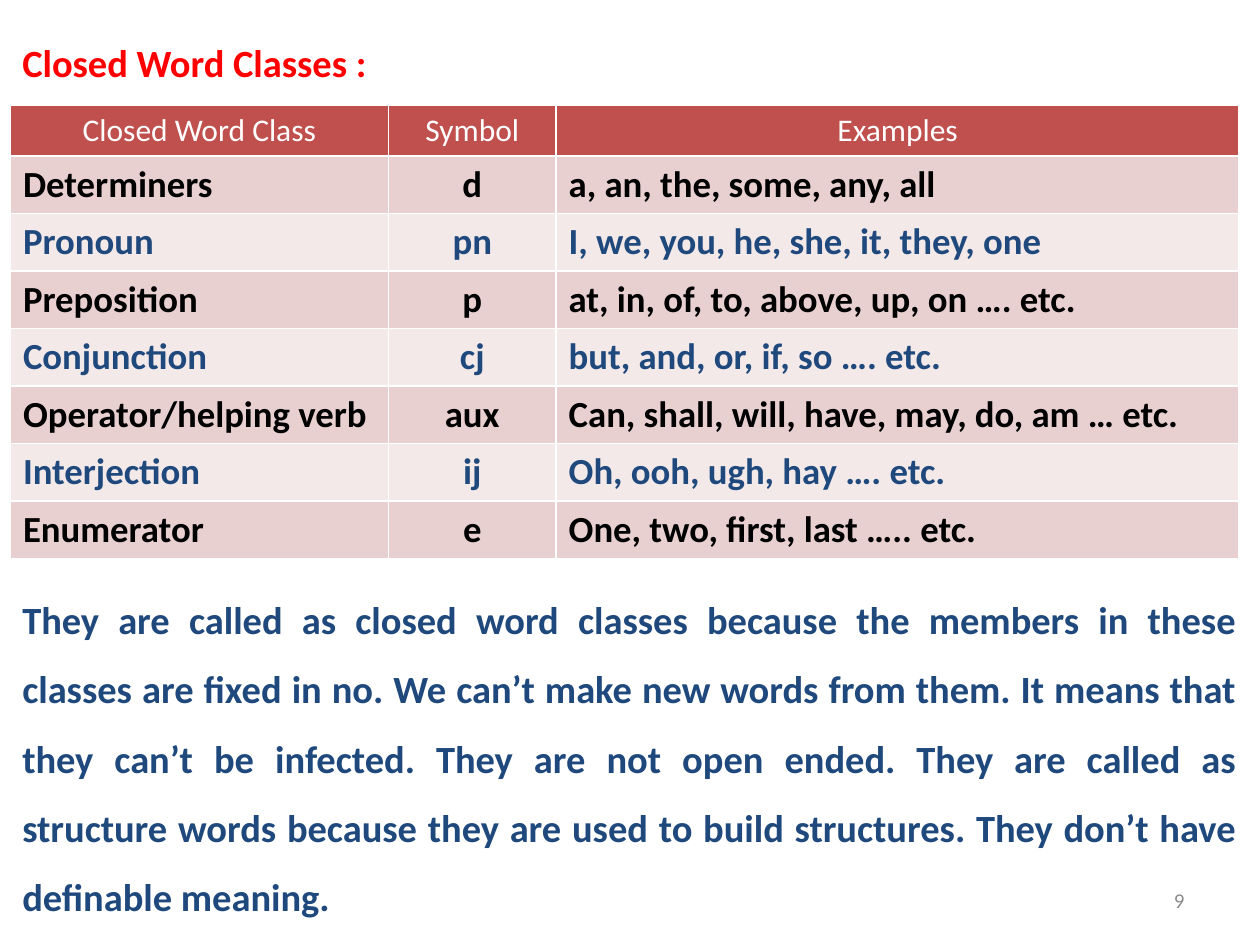
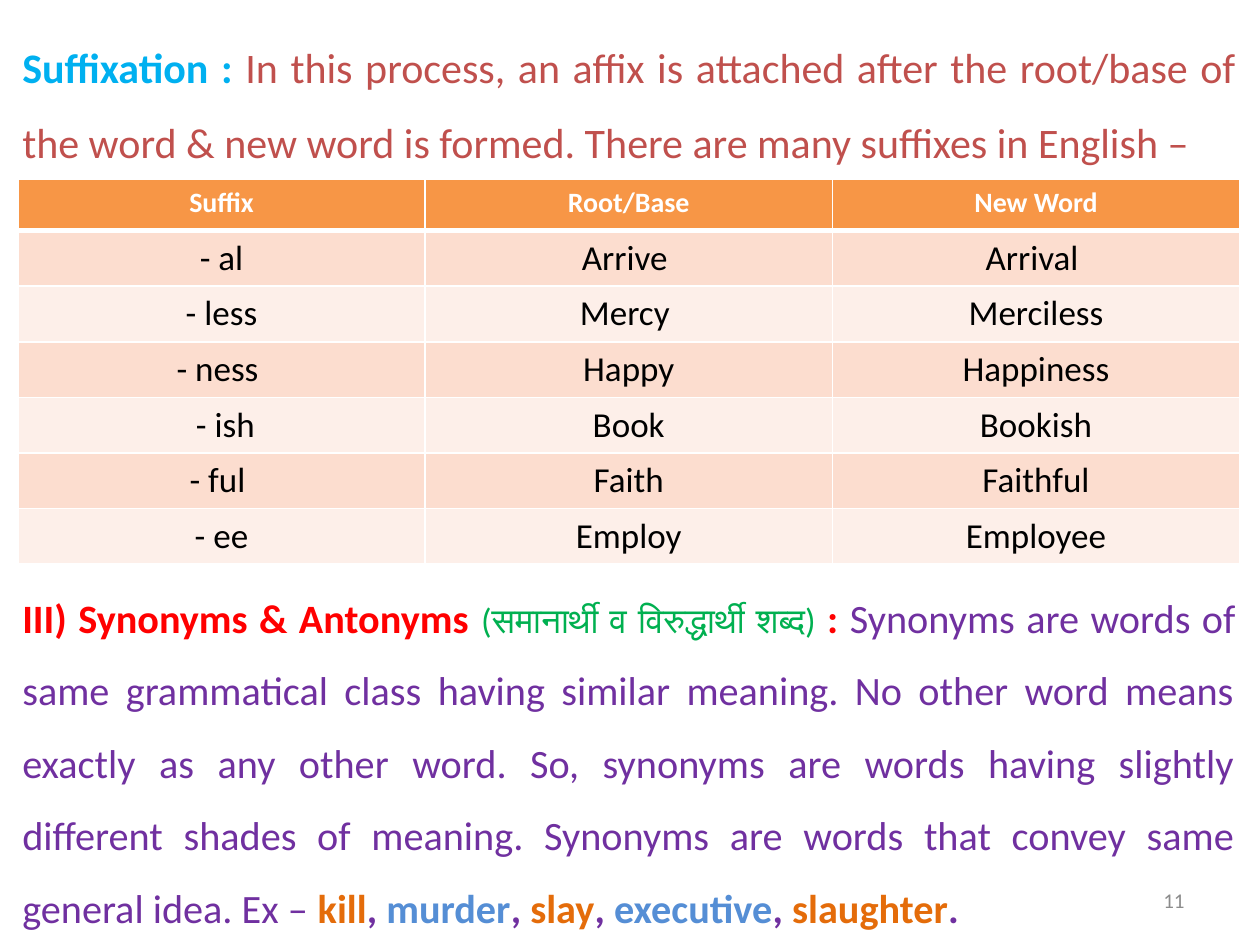
from lxml import etree
from pptx import Presentation
from pptx.dml.color import RGBColor
from pptx.enum.text import MSO_ANCHOR, PP_ALIGN
from pptx.oxml.ns import qn
from pptx.util import Cm, Pt

LEFT, MID, RIGHT, FULL = (PP_ALIGN.LEFT, PP_ALIGN.CENTER,
                          PP_ALIGN.RIGHT, PP_ALIGN.JUSTIFY)
CENTRE = MSO_ANCHOR.MIDDLE
FONT = "Calibri"
HUES = {
    "white": "FFFFFF", "black": "000000", "grey": "8C8C8C",
    "red": "FF0000", "navy": "1F497D", "brick": "C0504D",
    "rose": "E8D0D0", "blush": "F4E9E9", "orange": "F79646",
    "peach": "FCDDCF", "cream": "FDEFE9", "sky": "00B0F0",
    "green": "00B050", "purple": "7030A0", "rust": "E46C0A",
    "blue": "558ED5",
}
EDGE = 0.2          # left and top margin, cm
WIDE = 24.97        # width of the body text, cm


def hue(name):
    return RGBColor.from_string(HUES[name])


def add_run(par, text, size=20, color="black", bold=False):
    run = par.add_run()
    run.text = text
    font = run.font
    font.name, font.size, font.bold = FONT, Pt(size), bold
    font.color.rgb = hue(color)


def add_edge(cell, side, width):
    line = etree.SubElement(cell._tc.get_or_add_tcPr(), qn(f"a:ln{side}"),
                            w=str(Pt(width)))
    fill = etree.SubElement(line, qn("a:solidFill"))
    etree.SubElement(fill, qn("a:srgbClr"), val=HUES["white"])


class Deck:
    def __init__(self):
        self.file = Presentation()
        self.file.slide_width, self.file.slide_height = Cm(25.4), Cm(19.05)
        self.slide = None

    def page(self, number):
        self.slide = self.file.slides.add_slide(self.file.slide_layouts[6])
        self.text([(str(number), {"size": 12, "color": "grey"})],
                  18.2, 17.65, 5.93, 1.01, align=RIGHT, anchor=CENTRE,
                  space=1)

    def text(self, runs, left, top, width, height, align=FULL,
             anchor=MSO_ANCHOR.TOP, space=1.5):
        box = self.slide.shapes.add_textbox(Cm(left), Cm(top),
                                            Cm(width), Cm(height))
        frame = box.text_frame
        frame.word_wrap, frame.vertical_anchor = True, anchor
        par = frame.paragraphs[0]
        par.alignment, par.line_spacing = align, space
        for words, style in runs:
            add_run(par, words, **style)

    def table(self, rows, left, top, cols, aligns, heights, fills,
              head, inks, body, rule):
        """heights: header and body row; fills: header and two bands."""
        first, rest = heights
        tall = first + rest * (len(rows) - 1)
        grid = self.slide.shapes.add_table(
            len(rows), len(cols), Cm(left), Cm(top),
            Cm(sum(cols)), Cm(tall)).table
        for col, width in zip(grid.columns, cols):
            col.width = Cm(width)
        for i, row in enumerate(rows):
            grid.rows[i].height = Cm(rest if i else first)
            band = fills[2 - i % 2] if i else fills[0]
            style = dict(body, color=inks[(i - 1) % 2]) if i else head
            for j, words in enumerate(row):
                cell = grid.cell(i, j)
                for side in "LRTB":
                    heavy = (i, side) in ((0, "B"), (1, "T"))
                    add_edge(cell, side, rule if heavy else 1)
                cell.fill.solid()
                cell.fill.fore_color.rgb = hue(band)
                par = cell.text_frame.paragraphs[0]
                par.alignment = aligns[j] if i else MID
                add_run(par, words, **style)


WORDS = [
    ("Closed Word Class", "Symbol", "Examples"),
    ("Determiners", "d", "a, an, the, some, any, all"),
    ("Pronoun", "pn", "I, we, you, he, she, it, they, one"),
    ("Preposition", "p", "at, in, of, to, above, up, on …. etc."),
    ("Conjunction", "cj", "but, and, or, if, so …. etc."),
    ("Operator/helping verb", "aux",
     "Can, shall, will, have, may, do, am … etc."),
    ("Interjection", "ij", "Oh, ooh, ugh, hay …. etc."),
    ("Enumerator", "e", "One, two, first, last ….. etc."),
]
ENDINGS = [
    ("Suffix", "Root/Base", "New Word"),
    ("- al", "Arrive ", "Arrival "),
    ("- less", "Mercy ", "Merciless"),
    ("- ness ", "Happy", "Happiness"),
    (" - ish", "Book", "Bookish"),
    ("- ful ", "Faith", "Faithful"),
    ("- ee", "Employ", "Employee"),
]


def closed(deck):
    deck.page(9)
    # Heading
    deck.text([("Closed Word Classes :",
                {"size": 22, "color": "red", "bold": True})],
              EDGE, EDGE, 24.77, 18.42)
    # Word classes
    deck.table(WORDS, 0.21, 2.12, (7.62, 3.38, 13.77), (LEFT, MID, LEFT),
               (1.02, 1.16), ("brick", "rose", "blush"),
               {"size": 18, "color": "white"}, ("black", "navy"),
               {"size": 21, "bold": True}, 1)
    # Reason
    deck.text([("They are called as closed word classes because the members "
                "in these classes are fixed in no. We can’t make new words "
                "from them. It means that they can’t be infected. They are "
                "not open ended. They are called as structure words because "
                "they are used to build structures. They don’t have "
                "definable meaning. ",
                {"size": 22, "color": "navy", "bold": True})],
              EDGE, 11.43, WIDE, 7.32)


def suffix(deck):
    deck.page(11)
    # Suffixes
    deck.table(ENDINGS, 0.36, 3.61, (8.21,) * 3, (MID,) * 3,
               (1.04, 1.12), ("orange", "peach", "cream"),
               {"size": 16, "color": "white", "bold": True},
               ("black", "black"), {"size": 20}, 3)
    # Meaning of suffixation
    deck.text([("Suffixation : ", {"size": 24, "color": "sky", "bold": True}),
               ("In this process, an affix is attached after the root/base "
                "of the word & new word is formed. There are many suffixes "
                "in English – ", {"size": 24, "color": "brick"})],
              EDGE, EDGE, WIDE, 3.33)
    # Synonyms, with examples in turning colours
    title = {"size": 23, "color": "red", "bold": True}
    plain = {"size": 23, "color": "purple"}
    runs = [
        ("III) Synonyms & Antonyms ", title),
        ("(समानार्थी व विरुद्धार्थी शब्द)", {"size": 20, "color": "green"}),
        (" : ", title),
        ("Synonyms are words of same grammatical class having similar "
         "meaning. No other word means exactly as any other word. So, "
         "synonyms are words having slightly different shades of meaning. "
         "Synonyms are words that convey same general idea. Ex – ", plain),
    ]
    cases = ("kill", "murder", "slay", "executive", "slaughter")
    for i, word in enumerate(cases):
        tint = ("rust", "blue")[i % 2]
        mark = ", " if i < len(cases) - 1 else "."
        runs += [(word, dict(plain, color=tint, bold=True)),
                 (mark, dict(plain, bold=True))]
    deck.text(runs, EDGE, 11.35, WIDE, 7.47)


def main():
    deck = Deck()
    closed(deck)
    suffix(deck)
    deck.file.save("out.pptx")


if __name__ == "__main__":
    main()
